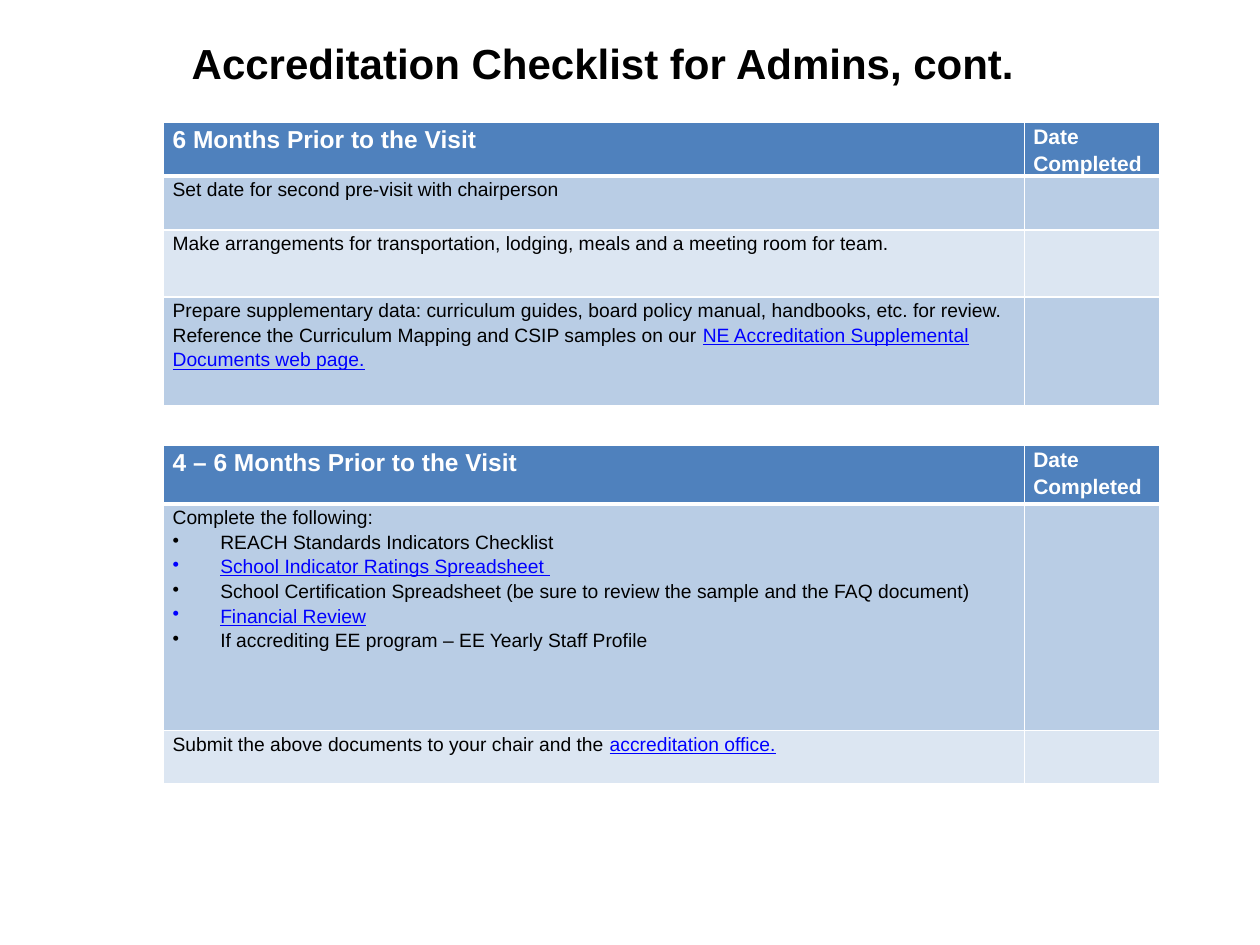
from pptx import Presentation
from pptx import util as u
from pptx.dml.color import RGBColor
from pptx.enum import text
from pptx.oxml import parse_xml
from pptx.oxml.ns import nsdecls

HEAD, BANDS = "4F81BD", ("DCE6F2", "B9CDE5")
WHITE, BLACK, BLUE = "FFFFFF", "000000", "0000FF"
COLS = (17.35, 2.72)
BULLET = 0.96


def color(code):
    return RGBColor.from_string(code)


def adjust(item, values):
    for key, value in values.items():
        setattr(item, key, value)


def link(words):
    return words, {"underline": True}, BLUE


def plain(words):
    return words, {}, BLACK


class Deck:
    def __init__(self, width, height):
        self.file = Presentation()
        self.file.slide_width, self.file.slide_height = u.Cm(width), u.Cm(height)
        self.slide = self.file.slides.add_slide(self.file.slide_layouts[5])
        self.body = {"name": "Arial", "size": u.Pt(11), "bold": False}

    def add_runs(self, par, runs, **style):
        for words, extra, code in runs:
            run = par.add_run()
            run.text = words
            adjust(run.font, {**self.body, **style, **extra})
            run.font.color.rgb = color(code)

    def title(self, words, left, top, width, height):
        box = self.slide.shapes.title
        adjust(box, {"left": u.Cm(left), "top": u.Cm(top),
                     "width": u.Cm(width), "height": u.Cm(height)})
        adjust(box.text_frame, {"margin_top": u.Cm(0.23), "word_wrap": True,
                                "vertical_anchor": text.MSO_ANCHOR.TOP})
        par = box.text_frame.paragraphs[0]
        par.alignment = text.PP_ALIGN.LEFT
        self.add_runs(par, [plain(words)], size=u.Pt(24), bold=True)

    def bullet(self, par):
        props = par._p.get_or_add_pPr()
        props.set("marL", str(u.Cm(BULLET)))
        props.set("indent", str(-u.Cm(BULLET)))
        props.append(parse_xml(f'<a:buChar {nsdecls("a")} char="•"/>'))

    def border(self, cell, row):
        props = cell._tc.get_or_add_tcPr()
        widths = {"L": 1, "R": 1, "T": 3 if row == 1 else 1, "B": 1 if row else 3}
        for side, width in widths.items():
            props.append(parse_xml(
                f'<a:ln{side} {nsdecls("a")} w="{u.Pt(width)}"><a:solidFill>'
                f'<a:srgbClr val="{WHITE}"/></a:solidFill></a:ln{side}>'))

    def cell(self, cell, row, fill):
        self.border(cell, row)
        adjust(cell, {"margin_left": u.Cm(0.18), "margin_right": u.Cm(0.18),
                      "margin_top": 0, "margin_bottom": 0})
        cell.fill.solid()
        cell.fill.fore_color.rgb = color(fill)

    def table(self, top, head, rows, heights):
        """Each row is a list of paragraphs; those after the first are bulleted."""
        grid = self.slide.shapes.add_table(
            len(heights), len(COLS), u.Cm(3.3), u.Cm(top),
            u.Cm(sum(COLS)), u.Cm(sum(heights))).table
        for col, width in zip(grid.columns, COLS):
            col.width = u.Cm(width)
        for row, height in enumerate(heights):
            grid.rows[row].height = u.Cm(height)
            for col in range(len(COLS)):
                self.cell(grid.cell(row, col), row, BANDS[row % 2] if row else HEAD)
        for col, (words, size) in enumerate(((head, 14), ("Date Completed", 12))):
            par = grid.cell(0, col).text_frame.paragraphs[0]
            par.line_spacing = 1.15
            self.add_runs(par, [(words, {}, WHITE)], size=u.Pt(size), bold=True)
        for row, pars in enumerate(rows, 1):
            frame = grid.cell(row, 0).text_frame
            for num, runs in enumerate(pars):
                par = frame.add_paragraph() if num else frame.paragraphs[0]
                if num:
                    self.bullet(par)
                par.line_spacing = 1.15
                self.add_runs(par, runs)


def main():
    deck = Deck(25.4, 19.05)
    deck.title("Accreditation Checklist for Admins, cont.", 3.61, 0.53, 20.93, 1.73)
    deck.table(2.46, "6 Months Prior to the Visit", [
        [[plain("Set date for second pre-visit with chairperson")]],
        [[plain("Make arrangements for transportation, lodging, meals "
                "and a meeting room for team.")]],
        [[plain("Prepare supplementary data: curriculum guides, board policy manual, "
                "handbooks, etc. for review. Reference the Curriculum Mapping "
                "and CSIP samples on our "),
          link("NE Accreditation Supplemental Documents web page.")]],
    ], (1.04, 1.09, 1.35, 2.18))
    deck.table(8.97, "4 – 6 Months Prior to the Visit", [
        [[plain("Complete the following:")],
         [plain("REACH Standards Indicators Checklist")],
         [link("School Indicator Ratings Spreadsheet ")],
         [plain("School Certification Spreadsheet (be sure to review "
                "the sample and the FAQ document)")],
         [link("Financial Review")],
         [plain("If accrediting EE program – EE Yearly Staff Profile")]],
        [[plain("Submit the above documents to your chair and the "),
          link("accreditation office.")]],
    ], (1.19, 4.57, 1.07))
    deck.file.save("out.pptx")


if __name__ == "__main__":
    main()
